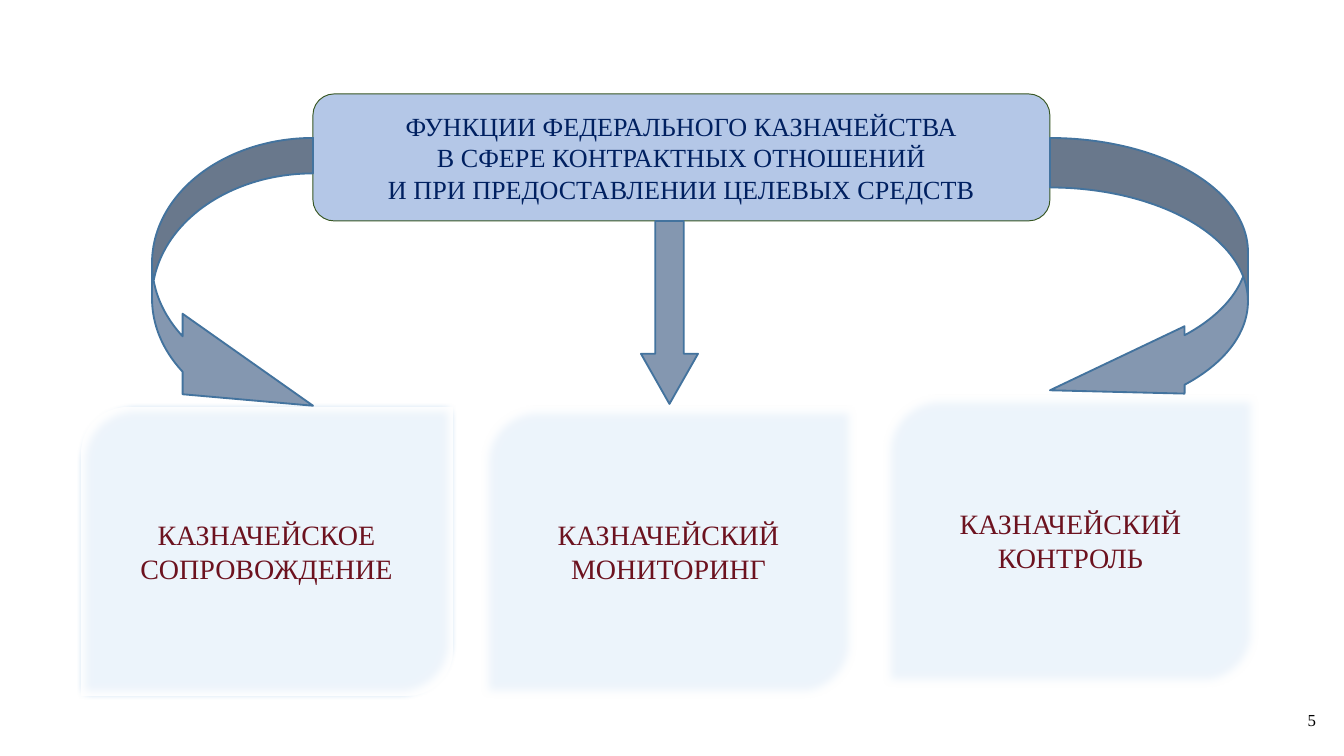
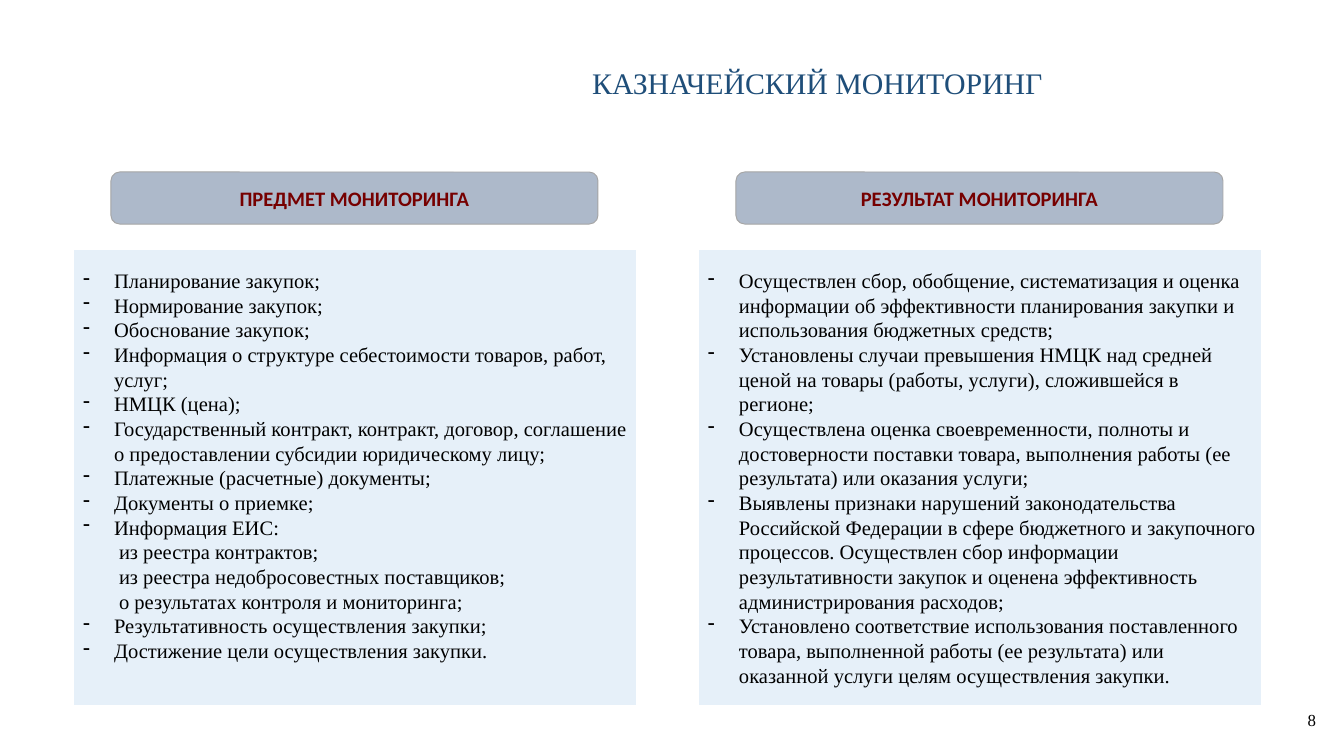
from dataclasses import dataclass

import lxml.etree
import pptx
import pptx.dml.color
import pptx.enum.shapes
import pptx.enum.text
import pptx.oxml.ns
import pptx.util

SHAPE = pptx.enum.shapes.MSO_SHAPE
ALIGN = pptx.enum.text.PP_ALIGN
ANCHOR = pptx.enum.text.MSO_ANCHOR
SLIDE_WIDTH, SLIDE_HEIGHT = 1344, 756
EMU_PER_PX = pptx.util.Inches(10) / SLIDE_WIDTH


@dataclass(frozen=True)
class TextStyle:
    """Font, size and colour of one kind of text."""
    size: int
    color: str
    font: str = "Times New Roman"
    bold: bool = False


@dataclass(frozen=True)
class Theme:
    """Colours and text styles shared by the slides."""
    header_fill: str = "B4C7E7"
    header_line: str = "385723"
    arrow_fill: str = "8497B0"
    arrow_line: str = "43739E"
    pale_fill: str = "DEEBF7"
    label_fill: str = "ADB9CA"
    grey_line: str = "A5A5A5"
    accent_line: str = "5B9BD5"
    white: str = "FFFFFF"
    title: TextStyle = TextStyle(16, "1F4E79")
    header: TextStyle = TextStyle(14, "002060")
    card: TextStyle = TextStyle(15, "6C121F")
    label: TextStyle = TextStyle(11, "760000", "Calibri", True)
    body: TextStyle = TextStyle(11, "000000")
    number: TextStyle = TextStyle(9, "000000")


THEME = Theme()

FUNCTIONS = [
    "ФУНКЦИИ ФЕДЕРАЛЬНОГО КАЗНАЧЕЙСТВА",
    "В СФЕРЕ КОНТРАКТНЫХ ОТНОШЕНИЙ",
    "И ПРИ ПРЕДОСТАВЛЕНИИ ЦЕЛЕВЫХ СРЕДСТВ",
]
CARDS = [
    (["КАЗНАЧЕЙСКОЕ", "СОПРОВОЖДЕНИЕ"], 405, THEME.accent_line, 2.25),
    (["КАЗНАЧЕЙСКИЙ", "МОНИТОРИНГ"], 405, THEME.grey_line, 0.5),
    (["КАЗНАЧЕЙСКИЙ", "КОНТРОЛЬ"], 394, THEME.grey_line, 0.5),
]
ARROWS = [
    (SHAPE.CURVED_RIGHT_ARROW, (152, 138, 161, 308), (0.22, 0.5, 0.81)),
    (SHAPE.CURVED_LEFT_ARROW, (1050, 138, 198, 286), (0.25, 0.34, 0.68)),
    (SHAPE.DOWN_ARROW, (641, 221, 57, 183), (0.5, 0.88)),
]
REGISTRIES = [
    "из реестра контрактов;",
    "из реестра недобросовестных поставщиков;",
    "о результатах контроля и мониторинга;",
]
SUBJECT = [
    "Планирование закупок;",
    "Нормирование закупок;",
    "Обоснование закупок;",
    "Информация о структуре себестоимости товаров, работ, услуг;",
    "НМЦК (цена);",
    "Государственный контракт, контракт, договор, соглашение "
    "о предоставлении субсидии юридическому лицу;",
    "Платежные (расчетные) документы;",
    "Документы о приемке;",
    "Информация ЕИС:",
    *REGISTRIES,
    "Результативность осуществления закупки;",
    "Достижение цели осуществления закупки.",
]
RESULT = [
    "Осуществлен сбор, обобщение, систематизация и оценка информации "
    "об эффективности планирования закупки и использования бюджетных средств;",
    "Установлены случаи превышения НМЦК над средней ценой на товары "
    "(работы, услуги), сложившейся в регионе;",
    "Осуществлена оценка своевременности, полноты и достоверности поставки "
    "товара, выполнения работы (ее результата) или оказания услуги;",
    "Выявлены признаки нарушений законодательства Российской Федерации "
    "в сфере бюджетного и закупочного процессов. Осуществлен сбор информации "
    "результативности закупок и оценена эффективность администрирования расходов;",
    "Установлено соответствие использования поставленного товара, выполненной "
    "работы (ее результата) или оказанной услуги целям осуществления закупки.",
]
COLUMNS = [("ПРЕДМЕТ МОНИТОРИНГА", SUBJECT), ("РЕЗУЛЬТАТ МОНИТОРИНГА", RESULT)]


def px(length):
    """Turn pixels into EMU."""
    return pptx.util.Emu(round(length * EMU_PER_PX))


def rgb(color):
    """Turn a hex string into a colour."""
    return pptx.dml.color.RGBColor.from_string(color)


def add_child(parent, tag, **attributes):
    """Append a DrawingML element with its attributes."""
    child = lxml.etree.SubElement(parent, pptx.oxml.ns.qn(tag))
    for name, value in attributes.items():
        child.set(name, str(value))
    return child


def write_text(shape, lines, style, align=ALIGN.CENTER, anchor=ANCHOR.MIDDLE,
               insets=(10, 5, 10, 5)):
    """Fill a shape with styled paragraphs."""
    frame = shape.text_frame
    frame.word_wrap = True
    frame.vertical_anchor = anchor
    (frame.margin_left, frame.margin_top,
     frame.margin_right, frame.margin_bottom) = map(px, insets)
    frame.text = "\n".join(lines)
    for paragraph in frame.paragraphs:
        paragraph.alignment = align
        for run in paragraph.runs:
            run.font.name = style.font
            run.font.size = pptx.util.Pt(style.size)
            run.font.bold = style.bold
            run.font.color.rgb = rgb(style.color)


def add_block(slide, kind, box, fill, line, width=0.5, opacity=100, adjust=()):
    """Add a preset shape with a flat fill and an outline."""
    block = slide.shapes.add_shape(kind, *map(px, box))
    block.shadow.inherit = False
    block.fill.solid()
    block.fill.fore_color.rgb = rgb(fill)
    block.line.color.rgb = rgb(line)
    block.line.width = pptx.util.Pt(width)
    for index, value in enumerate(adjust):
        block.adjustments[index] = value
    if opacity < 100:
        color = block.element.spPr.find(pptx.oxml.ns.qn("a:solidFill"))[0]
        add_child(color, "a:alpha", val=opacity * 1000)
    return block


def add_card(slide, index, lines, top, line, width):
    """Add one soft-edged function card of the row."""
    card = add_block(slide, SHAPE.ROUND_2_DIAG_RECTANGLE,
                     (79 + 402 * index, top, 375, 293),
                     THEME.pale_fill, line, width, opacity=55)
    effects = card.element.spPr.find(pptx.oxml.ns.qn("a:effectLst"))
    add_child(effects, "a:softEdge", rad=px(9))
    write_text(card, lines, THEME.card)


def add_page_number(slide, number):
    """Add the page number in the lower right corner."""
    page_number = slide.shapes.add_textbox(*map(px, (1282, 700, 44, 40)))
    write_text(page_number, [str(number)], THEME.number, ALIGN.RIGHT)


def add_title(slide, text):
    """Place and format the title placeholder."""
    title = slide.shapes.title
    title.left, title.top, title.width, title.height = map(px, (503, 59, 629, 47))
    write_text(title, [text], THEME.title)


def add_column(slide, index, label, items):
    """Add a label with the dashed list panel below it."""
    shift = 625 * index
    heading = add_block(slide, SHAPE.ROUNDED_RECTANGLE, (111 + shift, 172, 487, 52),
                        THEME.label_fill, THEME.grey_line)
    write_text(heading, [label], THEME.label)
    panel = add_block(slide, SHAPE.RECTANGLE, (73 + shift, 249, 564, 457),
                      THEME.pale_fill, THEME.white, 1, opacity=75)
    write_text(panel, items, THEME.body, ALIGN.LEFT, ANCHOR.TOP, (10, 19, 6, 5))
    for paragraph, item in zip(panel.text_frame.paragraphs, items):
        properties = paragraph._p.get_or_add_pPr()
        nested = item in REGISTRIES
        properties.set("marL", str(px(36 if nested else 31)))
        properties.set("indent", str(px(0 if nested else -31)))
        if nested:
            add_child(properties, "a:buNone")
        else:
            add_child(properties, "a:buChar", char="-")


def build_functions(slide):
    """Build the slide with the three treasury functions."""
    for index, card in enumerate(CARDS):
        add_card(slide, index, *card)
    header = add_block(slide, SHAPE.ROUNDED_RECTANGLE, (313, 94, 737, 127),
                       THEME.header_fill, THEME.header_line)
    write_text(header, FUNCTIONS, THEME.header)
    for kind, box, adjust in ARROWS:
        add_block(slide, kind, box, THEME.arrow_fill, THEME.arrow_line, 1,
                  adjust=adjust)
    add_page_number(slide, 5)


def build_monitoring(slide):
    """Build the slide on the subject and result of monitoring."""
    add_title(slide, "КАЗНАЧЕЙСКИЙ МОНИТОРИНГ")
    for index, column in enumerate(COLUMNS):
        add_column(slide, index, *column)
    add_page_number(slide, 8)


def main():
    """Build and save the presentation."""
    deck = pptx.Presentation()
    deck.slide_width, deck.slide_height = px(SLIDE_WIDTH), px(SLIDE_HEIGHT)
    title_only, blank = deck.slide_layouts[5], deck.slide_layouts[6]
    build_functions(deck.slides.add_slide(blank))
    build_monitoring(deck.slides.add_slide(title_only))
    deck.save("out.pptx")


if __name__ == "__main__":
    main()
